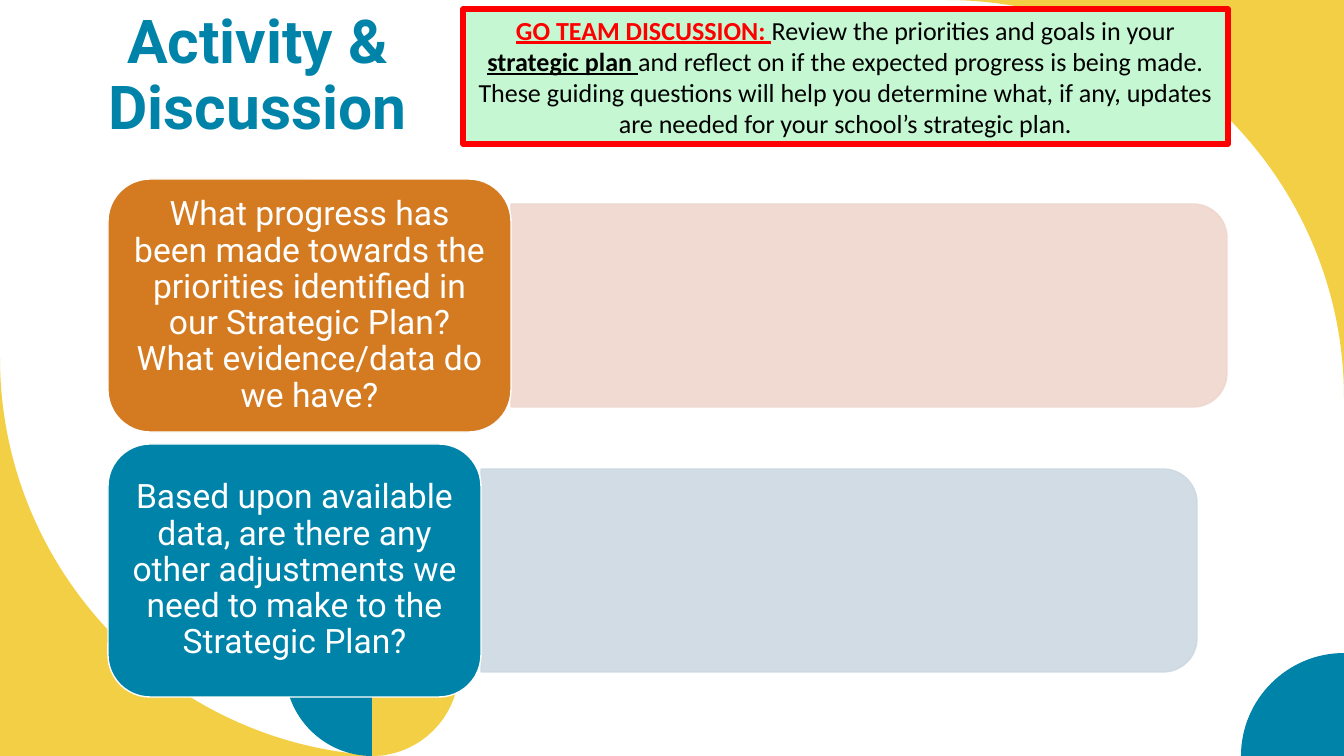
from lxml import etree
from pptx import Presentation
from pptx.dml.color import RGBColor
from pptx.enum.shapes import MSO_SHAPE
from pptx.enum.text import MSO_ANCHOR, PP_ALIGN
from pptx.oxml.ns import qn
from pptx.util import Emu, Pt

RECT = MSO_SHAPE.RECTANGLE
ROUND = MSO_SHAPE.ROUNDED_RECTANGLE
TAB = MSO_SHAPE.ROUND_2_SAME_RECTANGLE
MIDDLE = MSO_ANCHOR.MIDDLE
CENTER = PP_ALIGN.CENTER

WIDE, HIGH = 1344, 756
SCALE = 12192000 / WIDE
BEND = 0.55
COLORS = {
    "yellow": "F3CF45", "blue": "0083A9", "orange": "D47B22",
    "peach": "EFD7CD", "mist": "CCD9E2", "mint": "C4F7D2",
    "red": "FF0000", "black": "000000", "white": "FFFFFF",
}
NOTE = [
    ("GO TEAM DISCUSSION: ", "red", True),
    ("Review the priorities and goals in your ", "black", False),
    ("strategic plan ", "black", True),
    ("and reflect on if the expected progress is being made. These guiding "
     "questions will help you determine what, if any, updates are needed for "
     "your school’s strategic plan.", "black", False),
]
ROWS = [
    ("What progress has been made towards the priorities identified in our "
     "Strategic Plan? What evidence/data do we have?", 403, "orange", "peach"),
    ("Based upon available data, are there any other adjustments we need to "
     "make to the Strategic Plan?", 373, "blue", "mist"),
]


def px(n):
    return Emu(round(n * SCALE))


def rgb(name):
    return RGBColor.from_string(COLORS[name])


def paint(shape, fill, line=None, width=1):
    shape.shadow.inherit = False
    shape.fill.solid()
    shape.fill.fore_color.rgb = rgb(fill)
    if line:
        shape.line.color.rgb = rgb(line)
        shape.line.width = Pt(width)
    else:
        shape.line.fill.background()


def add_box(slide, kind, box, fill, line, width=1):
    shape = slide.shapes.add_shape(kind, *map(px, box))
    paint(shape, fill, line, width)
    return shape


def fade(shape, share):
    for color in shape.element.spPr.iter(qn("a:srgbClr")):
        etree.SubElement(color, qn("a:alpha"), val=str(share * 1000))


def set_para(shape, size, font, color, text="", space=1.0):
    frame = shape.text_frame
    frame.word_wrap = True
    frame.vertical_anchor = MIDDLE
    para = frame.paragraphs[0]
    para.text = text
    para.alignment = CENTER
    para.line_spacing = space
    para.font.size = Pt(size)
    para.font.name = font
    para.font.color.rgb = rgb(color)
    return para


def arc(start, knee, end):
    pulls = [tuple(a + (b - a) * BEND for a, b in zip(tip, knee))
             for tip in (start, end)]
    return [start, *pulls, end]


def add_patch(slide, arcs, color, tail=()):
    points = [point for curve in arcs for point in curve] + list(tail)
    dots = [(px(x), px(y)) for x, y in points]
    pen = slide.shapes.build_freeform(*dots[0])
    pen.add_line_segments(dots[1:], close=True)
    shape = pen.convert_to_shape()
    paint(shape, color)
    steps = list(next(shape.element.iter(qn("a:moveTo"))).getparent())
    for first in range(1, 4 * len(arcs), 4):
        curve = etree.Element(qn("a:cubicBezTo"))
        steps[first].addprevious(curve)
        for step in steps[first:first + 3]:
            curve.append(step[0])
            step.getparent().remove(step)


def add_petal(slide, x, y, wide, color):
    side, high = x + wide, abs(wide)
    outer = arc((side, y - high), (side, y), (x, y))
    inner = arc((x, y - 53), (x, y - 53 - high), (side, y - 53 - high))
    add_patch(slide, [outer, inner], color)


def add_corner(slide, x, y, wide, high, near, color):
    across, down = (x + wide, y), (x, y + high)
    knee = (x, y) if near else (x + wide, y + high)
    add_patch(slide, [arc(across, knee, down)], color, [(x, y)])


def add_decor(slide, wide, high):
    big, small = 398, 103
    across, down = wide - big, high - big
    add_patch(slide, [arc((wide, big), (wide, 0), (across, 0))],
              "yellow", [(wide, 0)])
    add_patch(slide, [arc((0, down), (0, high), (big, high))],
              "yellow", [(0, high)])
    left, top = wide - small, high - small
    add_patch(slide, [arc((wide, top), (left, top), (left, high))],
              "blue", [(wide, high)])
    add_petal(slide, 372, high, 87, "yellow")
    add_petal(slide, 372, high, -87, "blue")


def add_note(slide, box):
    shape = add_box(slide, RECT, box, "mint", "red", 4)
    para = set_para(shape, 18.6, "Calibri", "black")
    for text, color, strong in NOTE:
        run = para.add_run()
        run.text = text
        run.font.color.rgb = rgb(color)
        run.font.bold = strong
        run.font.underline = strong


def add_title(slide, box):
    shape = slide.shapes.add_textbox(*map(px, box))
    para = set_para(shape, 43.2, "Roboto", "blue", "Activity & Discussion", 0.9)
    para.font.bold = True


def add_row(slide, box, text, split, dark, light):
    x, y, wide, high = box
    inset = 25
    long, thick = wide - 403, high - 2 * inset
    shift = (long - thick) / 2
    bar = add_box(slide, TAB, (x + split + shift, y + inset - shift, thick, long),
                  light, light)
    bar.rotation = 90
    fade(bar, 90)
    card = add_box(slide, ROUND, (x, y, split, high), dark, "white")
    set_para(card, 24, "Roboto", "white", text, 0.9)


def main():
    deck = Presentation()
    deck.slide_width, deck.slide_height = px(WIDE), px(HIGH)
    slide = deck.slides.add_slide(deck.slide_layouts[6])
    add_decor(slide, WIDE, HIGH)
    add_note(slide, (463, 9, 765, 135))
    add_title(slide, (58, 9, 399, 136))
    for i, row in enumerate(ROWS):
        add_row(slide, (108, 179 + i * 265, 1119, 253), *row)
    deck.save("out.pptx")


if __name__ == "__main__":
    main()
